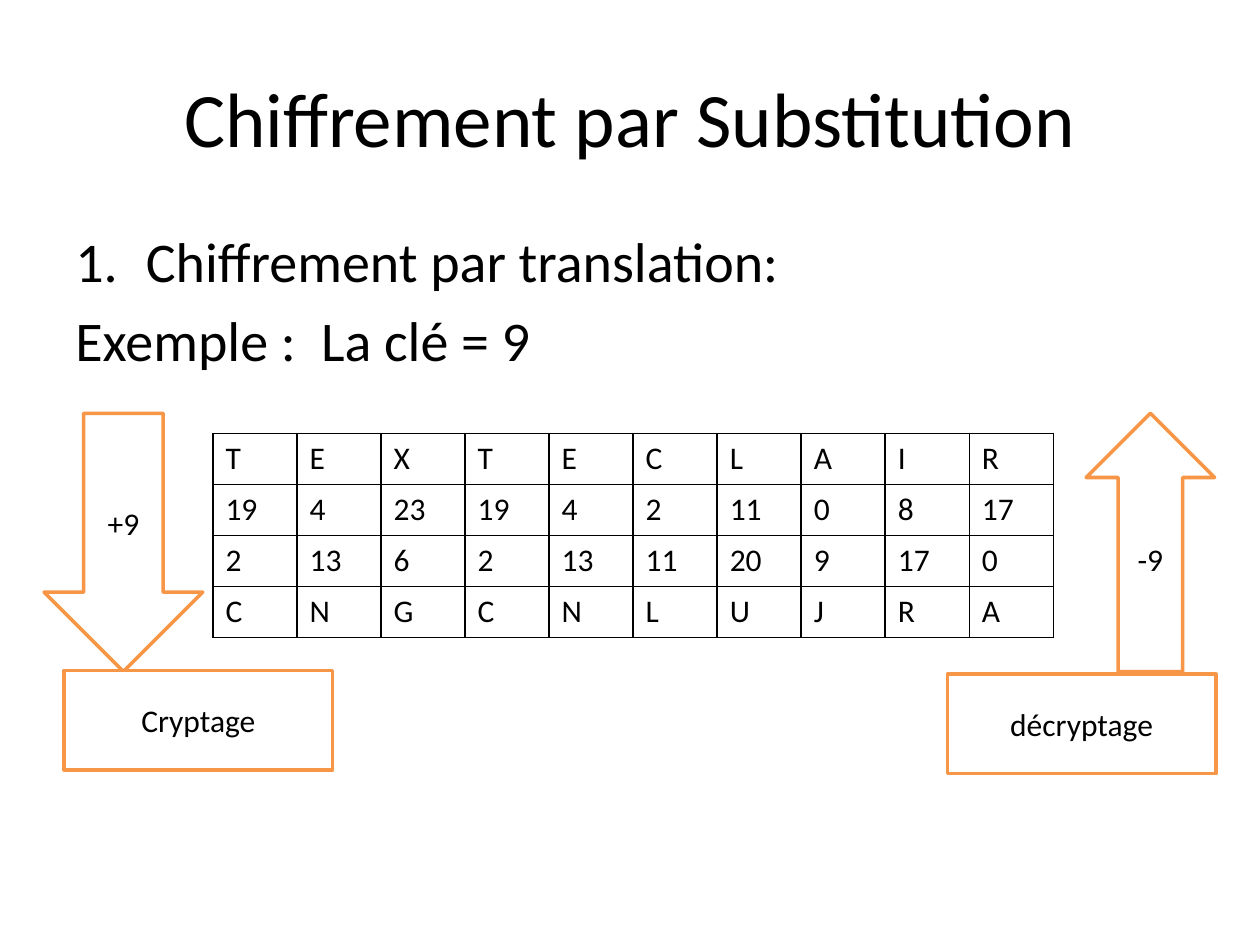
"""Build a slide that explains the translation cipher with a key of 9."""
from lxml import etree
from pptx import Presentation
from pptx.dml.color import RGBColor
from pptx.enum.shapes import MSO_SHAPE
from pptx.enum.text import MSO_ANCHOR, PP_ALIGN
from pptx.oxml.ns import qn
from pptx.util import Inches, Pt

RECTANGLE = MSO_SHAPE.RECTANGLE
DOWN_ARROW = MSO_SHAPE.DOWN_ARROW
UP_ARROW = MSO_SHAPE.UP_ARROW
TOP, MIDDLE = MSO_ANCHOR.TOP, MSO_ANCHOR.MIDDLE
LEFT, CENTER = PP_ALIGN.LEFT, PP_ALIGN.CENTER

KEY = 9
PLAIN_TEXT = "TEXTECLAIR"


def color(code):
    return RGBColor.from_string(code)


class CipherSlide:
    font, ink, paper, accent = "Calibri", "000000", "FFFFFF", "F79646"

    def __init__(self, deck):
        self.page = deck.slides.add_slide(deck.slide_layouts[6])

    def style(self, para, size, align=LEFT):
        para.alignment = align
        para.font.name = self.font
        para.font.size = Pt(size)
        para.font.color.rgb = color(self.ink)

    def text(self, place, lines, size, align=LEFT, anchor=TOP, numbered=0):
        box = self.page.shapes.add_textbox(*map(Inches, place))
        frame = box.text_frame
        frame.word_wrap = True
        frame.vertical_anchor = anchor
        for index, line in enumerate(lines):
            para = frame.add_paragraph() if index else frame.paragraphs[0]
            para.text = line
            if index < numbered:
                self.number(para)
            if index:
                para.space_before = Pt(0.2 * size)
            self.style(para, size, align)

    def number(self, para):
        properties = para._p.get_or_add_pPr()
        indent = Inches(0.56)
        properties.set("marL", str(indent))
        properties.set("indent", str(-indent))
        bullet = etree.SubElement(properties, qn("a:buAutoNum"))
        bullet.set("type", "arabicPeriod")

    def shape(self, kind, place, label):
        shape = self.page.shapes.add_shape(kind, *map(Inches, place))
        shape.shadow.inherit = False
        shape.fill.solid()
        shape.fill.fore_color.rgb = color(self.paper)
        shape.line.color.rgb = color(self.accent)
        shape.line.width = Pt(2)
        shape.text_frame.vertical_anchor = MIDDLE
        para = shape.text_frame.paragraphs[0]
        para.text = label
        self.style(para, 18, CENTER)

    def table(self, place, rows):
        frame = self.page.shapes.add_table(len(rows), len(rows[0]), *map(Inches, place))
        table = frame.table
        table.first_row = table.horz_banding = False
        for row, values in zip(table.rows, rows):
            for cell, value in zip(row.cells, values):
                self.border(cell)
                cell.fill.solid()
                cell.fill.fore_color.rgb = color(self.paper)
                para = cell.text_frame.paragraphs[0]
                para.text = str(value)
                self.style(para, 18)

    def border(self, cell):
        properties = cell._tc.get_or_add_tcPr()
        for side in ("lnL", "lnR", "lnT", "lnB"):
            line = etree.SubElement(properties, qn(f"a:{side}"), w=str(Pt(1)))
            fill = etree.SubElement(line, qn("a:solidFill"))
            etree.SubElement(fill, qn("a:srgbClr"), val=self.ink)


def main():
    deck = Presentation()
    deck.slide_width, deck.slide_height = Inches(10), Inches(7.5)
    slide = CipherSlide(deck)

    slide.text((0.5, 0.3, 9, 1.25), ["Chiffrement par Substitution"], 44, CENTER, MIDDLE)
    lines = ["Chiffrement par translation:", f"Exemple :  La clé = {KEY}"]
    slide.text((0.5, 1.75, 9, 4.95), lines, 32, numbered=1)

    ranks = [ord(letter) - ord("A") for letter in PLAIN_TEXT]
    shifted = [(rank + KEY) % 26 for rank in ranks]
    cipher_text = [chr(rank + ord("A")) for rank in shifted]
    slide.table((1.69, 3.44, 6.67, 1.62), [PLAIN_TEXT, ranks, shifted, cipher_text])

    slide.shape(DOWN_ARROW, (0.35, 3.28, 1.26, 2.05), f"+{KEY}")
    slide.shape(UP_ARROW, (8.62, 3.28, 1.02, 2.05), f"-{KEY}")
    slide.shape(RECTANGLE, (0.51, 5.32, 2.13, 0.79), "Cryptage")
    slide.shape(RECTANGLE, (7.52, 5.35, 2.13, 0.79), "décryptage")

    deck.save("out.pptx")


if __name__ == "__main__":
    main()
